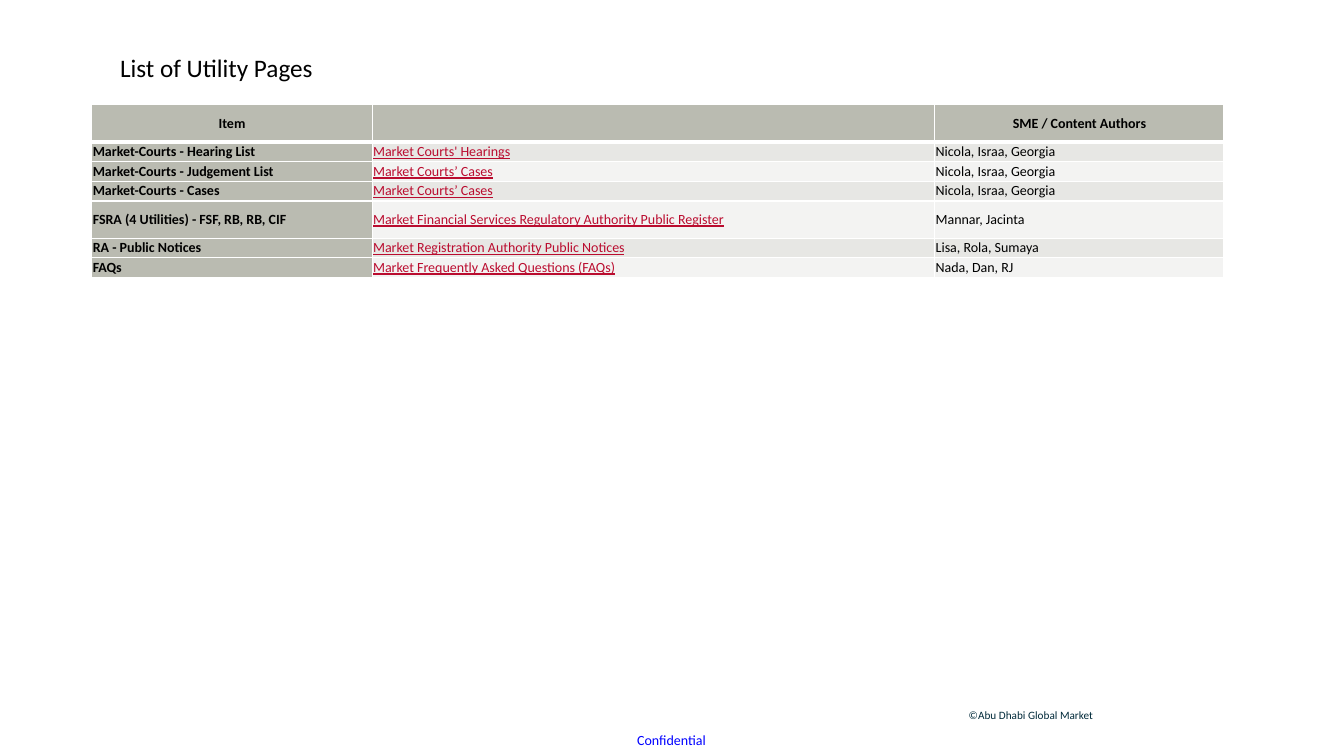
"""Build the slide that lists the utility pages and their content authors."""
import dataclasses

import lxml.etree
import pptx
import pptx.dml.color
import pptx.enum.text
import pptx.oxml.ns
import pptx.presentation
import pptx.shapes.autoshape
import pptx.slide
import pptx.table
import pptx.text.text
import pptx.util

SLIDE_WIDTH = pptx.util.Inches(13.33)
SLIDE_HEIGHT = pptx.util.Inches(7.5)
FONT = "Calibri"
BLACK, WHITE, LINK_RED = "000000", "FFFFFF", "BA0C2F"
HEADER_FILL = "BABBB1"
BAND_FILLS = ("E7E7E4", "F3F3F2")
COLUMN_PERCENTS = (20.86, 41.86, 21.53)
TALL_ROW, SHORT_ROW = 4.95, 2.59
CELL_MARGIN = pptx.util.Inches(0.01)


@dataclasses.dataclass(frozen=True)
class Style:
    """Character formatting of a run."""
    size: float = 10
    color: str = BLACK
    bold: bool = False
    underline: bool = False


@dataclasses.dataclass(frozen=True)
class Label:
    """Text box placed in percent of the slide's width and height."""
    text: str
    left: float
    top: float
    width: float
    height: float
    style: Style
    padded: bool = True


@dataclasses.dataclass(frozen=True)
class UtilityPage:
    """One row of the table."""
    item: str
    page: str
    authors: str
    height: float = SHORT_ROW


TITLE = Label("List of Utility Pages", 8.18, 6.27, 40.58, 5.33, Style(18))
FOOTERS = (
    Label("Confidential", 47.41, 96.8, 5.4, 2.27, Style(10, "0000FF"), False),
    Label("©Abu Dhabi Global Market", 71.34, 93.07, 12.08, 3.07, Style(8, "002A3A")),
)
HEADER = UtilityPage("Item", "", "SME / Content Authors", TALL_ROW)
PAGES = (
    UtilityPage("Market-Courts - Hearing List", "Market Courts' Hearings", "Nicola, Israa, Georgia"),
    UtilityPage("Market-Courts - Judgement List", "Market Courts’ Cases", "Nicola, Israa, Georgia"),
    UtilityPage("Market-Courts - Cases", "Market Courts’ Cases", "Nicola, Israa, Georgia"),
    UtilityPage("FSRA (4 Utilities) - FSF, RB, RB, CIF",
                "Market Financial Services Regulatory Authority Public Register",
                "Mannar, Jacinta", TALL_ROW),
    UtilityPage("RA - Public Notices", "Market Registration Authority Public Notices",
                "Lisa, Rola, Sumaya"),
    UtilityPage("FAQs", "Market Frequently Asked Questions (FAQs)", "Nada, Dan, RJ"),
)
HEADING_STYLE = Style(bold=True)
BODY_STYLES = (HEADING_STYLE, Style(color=LINK_RED, underline=True), Style())


def across(percent: float) -> int:
    """Return a share of the slide's width."""
    return round(SLIDE_WIDTH * percent / 100)


def down(percent: float) -> int:
    """Return a share of the slide's height."""
    return round(SLIDE_HEIGHT * percent / 100)


def rgb(color: str) -> pptx.dml.color.RGBColor:
    """Turn a hex string into a colour."""
    return pptx.dml.color.RGBColor.from_string(color)


def add_run(paragraph: pptx.text.text._Paragraph, text: str, style: Style) -> None:
    """Append a formatted run to the paragraph."""
    run = paragraph.add_run()
    run.text = text
    run.font.name = FONT
    run.font.size = pptx.util.Pt(style.size)
    run.font.bold = style.bold
    run.font.underline = style.underline
    run.font.color.rgb = rgb(style.color)


def fill_label(shape: pptx.shapes.autoshape.Shape, label: Label) -> None:
    """Place the shape and write the label's text in it."""
    shape.left, shape.top = across(label.left), down(label.top)
    shape.width, shape.height = across(label.width), down(label.height)
    frame = shape.text_frame
    frame.word_wrap = True
    frame.auto_size = pptx.enum.text.MSO_AUTO_SIZE.SHAPE_TO_FIT_TEXT
    frame.vertical_anchor = pptx.enum.text.MSO_ANCHOR.TOP
    if not label.padded:
        frame.margin_left = frame.margin_top = frame.margin_right = frame.margin_bottom = 0
    paragraph = frame.paragraphs[0]
    paragraph.alignment = pptx.enum.text.PP_ALIGN.LEFT
    add_run(paragraph, label.text, label.style)


def add_borders(cell: pptx.table._Cell, top: float, bottom: float) -> None:
    """Draw white borders around the cell."""
    properties = cell._tc.get_or_add_tcPr()
    for side, points in (("L", 1), ("R", 1), ("T", top), ("B", bottom)):
        line = lxml.etree.SubElement(properties, pptx.oxml.ns.qn(f"a:ln{side}"),
                                     w=str(pptx.util.Pt(points)))
        fill = lxml.etree.SubElement(line, pptx.oxml.ns.qn("a:solidFill"))
        lxml.etree.SubElement(fill, pptx.oxml.ns.qn("a:srgbClr"), val=WHITE)


def fill_cell(cell: pptx.table._Cell, text: str, style: Style, fill: str, centered: bool) -> None:
    """Colour the cell and write its text."""
    cell.margin_left = cell.margin_top = cell.margin_right = cell.margin_bottom = CELL_MARGIN
    cell.vertical_anchor = pptx.enum.text.MSO_ANCHOR.MIDDLE
    cell.fill.solid()
    cell.fill.fore_color.rgb = rgb(fill)
    if text:
        paragraph = cell.text_frame.paragraphs[0]
        alignment = pptx.enum.text.PP_ALIGN
        paragraph.alignment = alignment.CENTER if centered else alignment.LEFT
        add_run(paragraph, text, style)


def add_page_table(slide: pptx.slide.Slide) -> None:
    """Add the table of utility pages."""
    rows = (HEADER, *PAGES)
    table = slide.shapes.add_table(
        len(rows), len(COLUMN_PERCENTS), across(6.83), down(13.87),
        across(sum(COLUMN_PERCENTS)), down(sum(row.height for row in rows))).table
    table.first_row = table.horz_banding = False
    for column, percent in zip(table.columns, COLUMN_PERCENTS):
        column.width = across(percent)
    for row_index, row in enumerate(rows):
        table.rows[row_index].height = down(row.height)
        is_header = row_index == 0
        for column_index, text in enumerate((row.item, row.page, row.authors)):
            cell = table.cell(row_index, column_index)
            is_heading = is_header or column_index == 0
            style = HEADING_STYLE if is_header else BODY_STYLES[column_index]
            fill = HEADER_FILL if is_heading else BAND_FILLS[(row_index - 1) % 2]
            add_borders(cell, 3 if row_index == 1 else 1, 3 if is_header else 1)
            fill_cell(cell, text, style, fill, is_header)


def main() -> None:
    """Build and save the presentation."""
    presentation = pptx.Presentation()
    presentation.slide_width, presentation.slide_height = SLIDE_WIDTH, SLIDE_HEIGHT
    slide = presentation.slides.add_slide(presentation.slide_layouts[5])
    for footer in FOOTERS:
        fill_label(slide.shapes.add_textbox(0, 0, 0, 0), footer)
    add_page_table(slide)
    fill_label(slide.shapes.title, TITLE)
    presentation.save("out.pptx")


if __name__ == "__main__":
    main()
